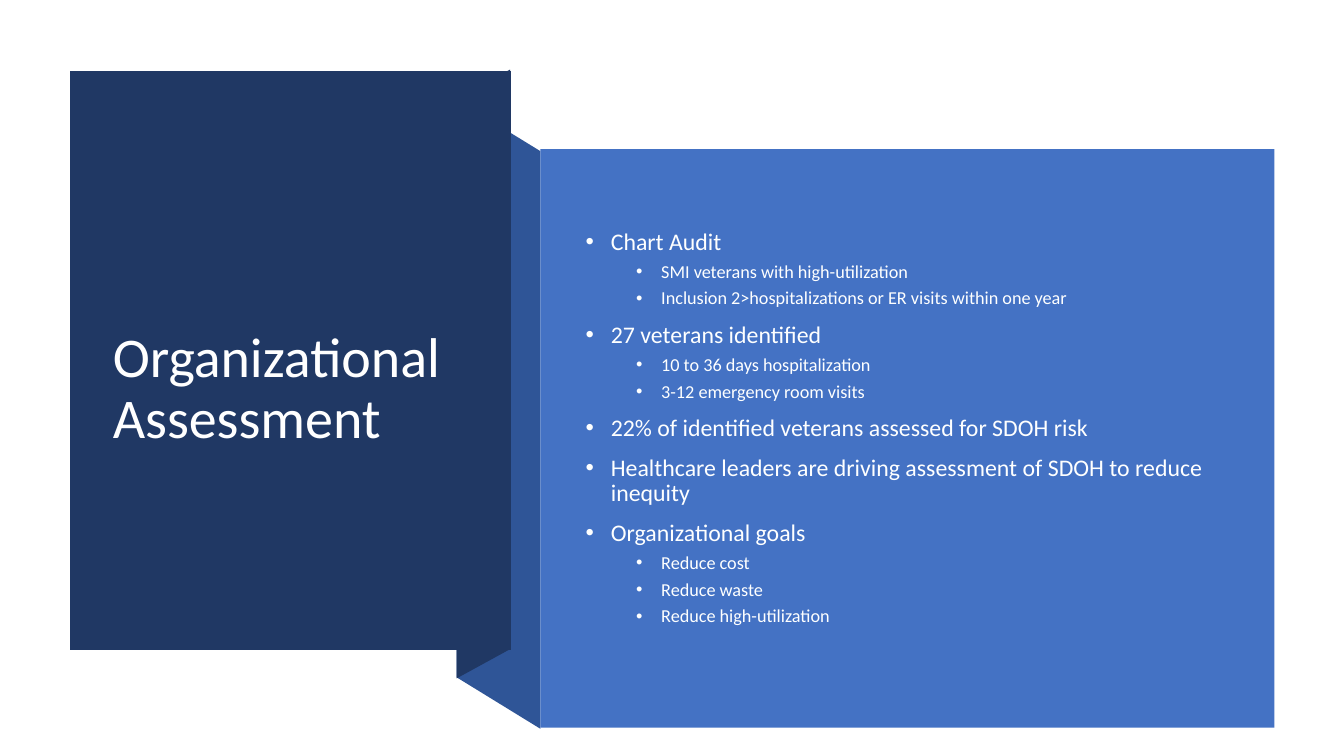
"""Build the Organizational Assessment slide."""
from dataclasses import dataclass

from lxml import etree
from pptx import Presentation
from pptx.dml.color import RGBColor
from pptx.enum.shapes import MSO_SHAPE
from pptx.enum.text import MSO_ANCHOR
from pptx.oxml.ns import qn
from pptx.util import Inches, Pt

RECTANGLE = MSO_SHAPE.RECTANGLE
MIDDLE = MSO_ANCHOR.MIDDLE


@dataclass(frozen=True)
class Theme:
    """Colours and type sizes."""
    font: str = "Calibri"
    dark: str = "203864"
    fold: str = "2F5597"
    panel: str = "4472C4"
    title_text: str = "FFFFFF"
    body_text: str = "FEFFFF"
    title_size: int = 40
    body_sizes: tuple = (17, 13)
    space_before: tuple = (10, 5)
    indents: tuple = (0.25, 0.75)
    hanging: float = 0.25
    line_spacing: float = 0.9


class SlideBuilder:
    """Draw styled elements on the current slide."""

    def __init__(self, slide, theme):
        self.s = slide
        self.theme = theme

    def paint(self, sp, color):
        """Give a shape a plain fill."""
        sp.shadow.inherit = False
        sp.fill.solid()
        sp.fill.fore_color.rgb = RGBColor.from_string(color)
        sp.line.fill.background()

    def polygon(self, points, color):
        """Draw a closed outline."""
        start, *rest = [(Inches(x), Inches(y)) for x, y in points]
        builder = self.s.shapes.build_freeform(*start)
        builder.add_line_segments(rest, close=True)
        self.paint(builder.convert_to_shape(), color)

    def rectangle(self, box, color):
        """Draw a filled rectangle."""
        self.paint(self.s.shapes.add_shape(RECTANGLE, *map(Inches, box)), color)

    def text_frame(self, box, **formats):
        """Add a wrapped, vertically centred text box."""
        tf = self.s.shapes.add_textbox(*map(Inches, box)).text_frame
        for name, value in {"word_wrap": True, "vertical_anchor": MIDDLE, **formats}.items():
            setattr(tf, name, value)
        return tf

    def styled_run(self, p, text, size, color):
        """Put one styled run in a paragraph."""
        p.line_spacing = self.theme.line_spacing
        r = p.add_run()
        r.text = text
        for name, value in {"name": self.theme.font, "size": Pt(size)}.items():
            setattr(r.font, name, value)
        r.font.color.rgb = RGBColor.from_string(color)

    def title(self, box, text, top_inset):
        """Add the slide title."""
        tf = self.text_frame(box, margin_top=Inches(top_inset))
        self.styled_run(tf.paragraphs[0], text, self.theme.title_size, self.theme.title_text)

    def bullets(self, box, items):
        """Add a two-level bulleted list."""
        theme = self.theme
        tf = self.text_frame(box)
        for i, (level, text) in enumerate(items):
            p = tf.add_paragraph() if i else tf.paragraphs[0]
            p.level = level
            p.space_before = Pt(theme.space_before[level])
            self.styled_run(p, text, theme.body_sizes[level], theme.body_text)
            pPr = p._p.get_or_add_pPr()
            pPr.set("marL", str(Inches(theme.indents[level])))
            pPr.set("indent", str(-Inches(theme.hanging)))
            etree.SubElement(pPr, qn("a:buFont")).set("typeface", "Arial")
            etree.SubElement(pPr, qn("a:buChar")).set("char", "•")


ITEMS = [
    (0, "Chart Audit"),
    (1, "SMI veterans with high-utilization"),
    (1, "Inclusion 2>hospitalizations or ER visits within one year"),
    (0, "27 veterans identified"),
    (1, "10 to 36 days hospitalization"),
    (1, "3-12 emergency room visits"),
    (0, "22% of identified veterans assessed for SDOH risk"),
    (0, "Healthcare leaders are driving assessment of SDOH to reduce inequity"),
    (0, "Organizational goals"),
    (1, "Reduce cost"),
    (1, "Reduce waste"),
    (1, "Reduce high-utilization"),
]


def main():
    """Create and save the slide."""
    prs = Presentation()
    prs.slide_width, prs.slide_height = Inches(13.33), Inches(7.5)
    theme = Theme()
    page = SlideBuilder(prs.slides.add_slide(prs.slide_layouts[6]), theme)
    page.polygon([(5.36, 7.23), (4.53, 6.72), (4.53, 0.99), (5.36, 1.5)], theme.fold)
    page.polygon([(5.06, 6.44), (4.53, 6.73), (4.53, 0.98), (5.06, 0.69)], theme.dark)
    page.polygon([(0.69, 0.7), (5.07, 0.7), (5.07, 6.45), (0.69, 6.45)], theme.dark)
    page.title((1.02, 1.07, 3.71, 4.99), "Organizational Assessment", top_inset=0.65)
    page.rectangle((5.36, 1.48, 7.28, 5.74), theme.panel)
    page.bullets((5.71, 1.88, 6.51, 4.74), ITEMS)
    prs.save("out.pptx")


if __name__ == "__main__":
    main()
